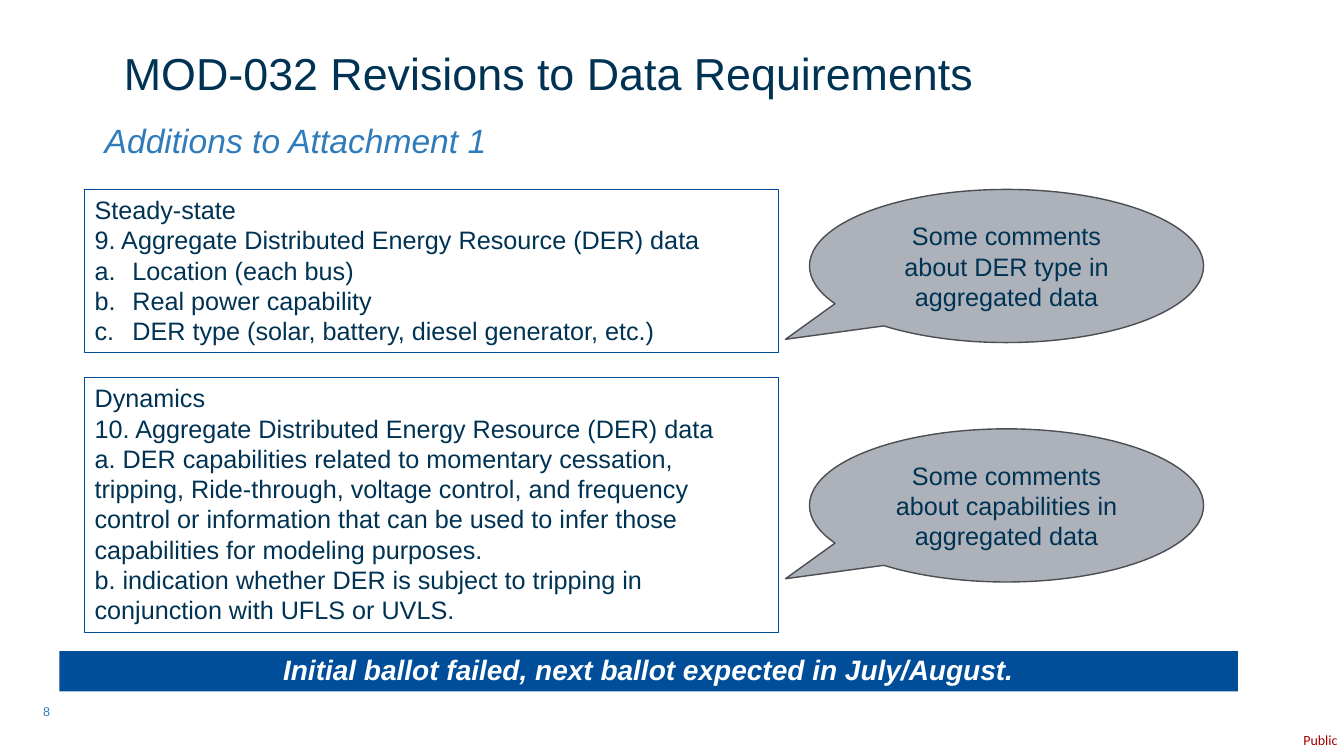
"""Build the slide on MOD-032 revisions to data requirements."""
import pptx
import pptx.dml.color
import pptx.enum.shapes
import pptx.enum.text
import pptx.oxml.xmlchemy
import pptx.util

Pt = pptx.util.Pt
SHAPE = pptx.enum.shapes.MSO_SHAPE
ALIGN = pptx.enum.text.PP_ALIGN
ANCHOR = pptx.enum.text.MSO_ANCHOR

NAVY, BLUE, SKY, RED = "003353", "004E9A", "307CBA", "A80000"
WHITE, GREY, DARK_GREY = "FFFFFF", "ACB1BA", "4B4E52"

TITLE = "MOD-032 Revisions to Data Requirements"
SUBTITLE = "Additions to Attachment 1"
BALLOT = "Initial ballot failed, next ballot expected in July/August."
PAGE_NUMBER = "8"
CLASSIFICATION = "Public"

REQUIREMENTS = [
    {"top": 135.3, "height": 116.8,
     "lines": ["Steady-state", "9. Aggregate Distributed Energy Resource (DER) data"],
     "lettered": ["Location (each bus)", "Real power capability",
                  "DER type (solar, battery, diesel generator, etc.)"]},
    {"top": 269.8, "height": 181.8,
     "lines": ["Dynamics", "10. Aggregate Distributed Energy Resource (DER) data",
               "a. DER capabilities related to momentary cessation, tripping, Ride-through, "
               "voltage control, and frequency control or information that can be used to "
               "infer those capabilities for modeling purposes.",
               "b. indication whether DER is subject to tripping in conjunction with UFLS or UVLS."],
     "lettered": []},
]
COMMENTS = [
    (135.3, "Some comments about DER type in aggregated data"),
    (306.3, "Some comments about capabilities in aggregated data"),
]


def rgb(colour):
    return pptx.dml.color.RGBColor.from_string(colour)


def write(shape, lines, size, colour, font="Arial", bold=False, italic=False,
          align=ALIGN.LEFT, anchor=ANCHOR.TOP, spacing=1.0):
    frame = shape.text_frame
    frame.word_wrap = True
    frame.vertical_anchor = anchor
    frame.text = "\n".join(lines)
    for paragraph in frame.paragraphs:
        paragraph.alignment = align
        paragraph.line_spacing = spacing
        for run in paragraph.runs:
            run.font.name, run.font.size = font, Pt(size)
            run.font.bold, run.font.italic = bold, italic
            run.font.color.rgb = rgb(colour)
    return frame


def add_label(slide, box, text, size, colour, **style):
    label = slide.shapes.add_textbox(*map(Pt, box))
    return write(label, [text], size, colour, **style)


def add_panel(slide, kind, box, fill=None, line=None, width=0.75):
    panel = slide.shapes.add_shape(kind, *map(Pt, box))
    panel.shadow.inherit = False
    if fill:
        panel.fill.solid()
        panel.fill.fore_color.rgb = rgb(fill)
    else:
        panel.fill.background()
    if line:
        panel.line.color.rgb = rgb(line)
        panel.line.width = Pt(width)
    else:
        panel.line.fill.background()
    return panel


def letter(paragraph, indent=27):
    properties = paragraph._p.get_or_add_pPr()
    properties.set("marL", str(Pt(indent)))
    properties.set("indent", str(-Pt(indent)))
    numbering = pptx.oxml.xmlchemy.OxmlElement("a:buAutoNum")
    numbering.set("type", "alphaLcPeriod")
    properties.append(numbering)


def main():
    deck = pptx.Presentation()
    deck.slide_width, deck.slide_height = Pt(960), Pt(540)
    slide = deck.slides.add_slide(deck.slide_layouts[6])

    add_label(slide, (81.4, 33.1, 841.7, 42.5), TITLE, 32, NAVY, spacing=0.9)
    add_label(slide, (67.7, 85.7, 841.7, 39.6), SUBTITLE, 24, SKY, italic=True, spacing=0.9)

    for requirement in REQUIREMENTS:
        box = (60.5, requirement["top"], 495.4, requirement["height"])
        panel = add_panel(slide, SHAPE.RECTANGLE, box, line=BLUE)
        plain = requirement["lines"]
        frame = write(panel, plain + requirement["lettered"], 18, NAVY)
        for paragraph in frame.paragraphs[len(plain):]:
            letter(paragraph)

    for top, comment in COMMENTS:
        callout = add_panel(slide, SHAPE.OVAL_CALLOUT, (578.2, top, 281.5, 109.4),
                            GREY, DARK_GREY, 1)
        callout.adjustments[0], callout.adjustments[1] = -0.561, 0.479
        write(callout, [comment], 18, NAVY, align=ALIGN.CENTER, anchor=ANCHOR.MIDDLE)

    banner = add_panel(slide, SHAPE.RECTANGLE, (42.5, 465.1, 841.7, 28.8), BLUE)
    write(banner, [BALLOT], 20, WHITE, bold=True, italic=True, align=ALIGN.CENTER, spacing=0.9)

    add_label(slide, (23.8, 493.9, 36, 28.8), PAGE_NUMBER, 9, SKY, anchor=ANCHOR.MIDDLE)
    mark = add_label(slide, (931, 522.7, 28.8, 12.2), CLASSIFICATION, 10, RED, font="Calibri")
    mark.margin_left = mark.margin_right = mark.margin_top = mark.margin_bottom = 0
    mark.word_wrap = False

    deck.save("out.pptx")


if __name__ == "__main__":
    main()
